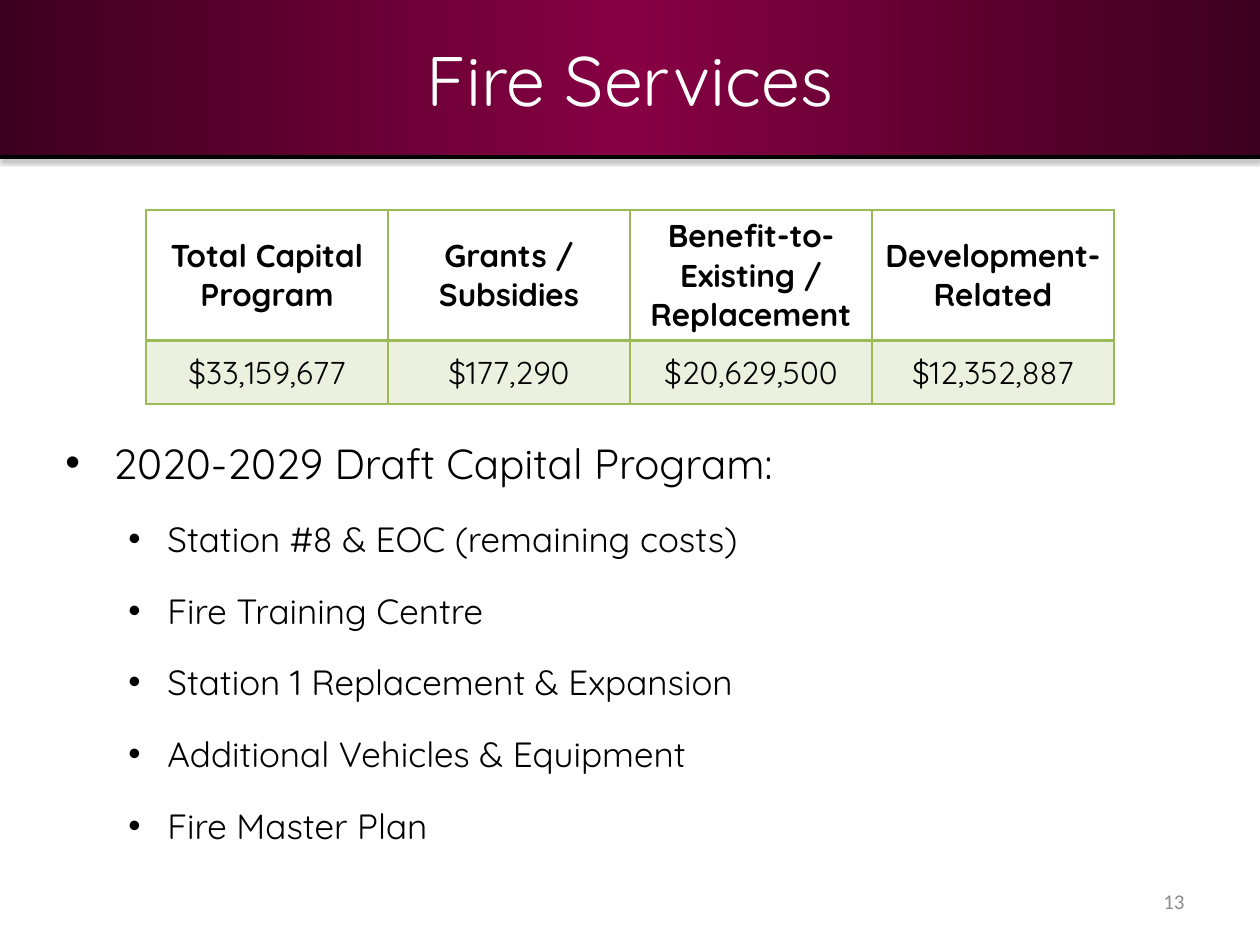
from lxml import etree
from pptx import Presentation
from pptx.dml.color import RGBColor
from pptx.enum.shapes import MSO_CONNECTOR, MSO_SHAPE
from pptx.enum.text import MSO_ANCHOR as Anchor, PP_ALIGN as Align
from pptx.oxml import parse_xml
from pptx.oxml.ns import nsdecls, qn
from pptx.util import Emu, Pt

BLACK = RGBColor(0x00, 0x00, 0x00)
WHITE = RGBColor(0xFF, 0xFF, 0xFF)
GRAY = RGBColor(0x8C, 0x8C, 0x8C)
GREEN = RGBColor(0x9B, 0xBB, 0x59)
PALE_GREEN = RGBColor(0xEB, 0xF1, 0xDE)
DARK_WINE = RGBColor(0x3D, 0x00, 0x1E)
WINE = RGBColor(0x86, 0x00, 0x43)


def px(count):
    return Emu(round(count * 914400 / 126))


def write(frame, text, align, anchor, **font_format):
    frame.word_wrap = True
    frame.vertical_anchor = anchor
    para = frame.paragraphs[0]
    para.alignment = align
    span = para.add_run()
    span.text = text
    color = font_format.pop("color")
    for name, value in font_format.items():
        setattr(span.font, name, value)
    span.font.color.rgb = color


deck = Presentation()
deck.slide_width, deck.slide_height = px(1260), px(945)
page = deck.slides.add_slide(deck.slide_layouts[6])

# Title band with a gradient that is brightest in the middle
band = page.shapes.add_shape(MSO_SHAPE.RECTANGLE, 0, 0, px(1260), px(157))
band.shadow.inherit = False
band.line.fill.background()
band.fill.gradient()
band.fill.gradient_angle = 0
stops = band._element.spPr.find(qn("a:gradFill")).find(qn("a:gsLst"))
for stop in list(stops):
    stops.remove(stop)
for position, color in [(0, DARK_WINE), (50, WINE), (100, DARK_WINE)]:
    stop = etree.SubElement(stops, qn("a:gs"), pos=str(position * 1000))
    etree.SubElement(stop, qn("a:srgbClr"), val=str(color))

title = page.shapes.add_textbox(0, 0, px(1260), px(157))
write(title.text_frame, "Fire Services", Align.CENTER, Anchor.MIDDLE,
      name="Quicksand", size=Pt(40), color=WHITE)

# Rule under the band, with a soft shadow
rule = page.shapes.add_connector(MSO_CONNECTOR.STRAIGHT, 0, px(157), px(1260), px(157))
rule.line.color.rgb = BLACK
rule.line.width = Pt(2)
rule._element.spPr.append(parse_xml(
    f'<a:effectLst {nsdecls("a")}>'
    '<a:outerShdw blurRad="39370" dist="20320" dir="5400000" rotWithShape="0">'
    '<a:srgbClr val="000000"><a:alpha val="38000"/></a:srgbClr>'
    '</a:outerShdw></a:effectLst>'))

# Funding table
ROWS = [
    ["Total Capital Program", "Grants / Subsidies",
     "Benefit-to-Existing / Replacement", "Development-Related"],
    ["$33,159,677", "$177,290", "$20,629,500", "$12,352,887"],
]
table = page.shapes.add_table(2, 4, px(146), px(210), px(968), px(194)).table
for column in table.columns:
    column.width = px(242)
for row, height in zip(table.rows, [131, 63]):
    row.height = px(height)

for row_index, texts in enumerate(ROWS):
    header = row_index == 0
    for column_index, text in enumerate(texts):
        cell = table.cell(row_index, column_index)
        write(cell.text_frame, text, Align.CENTER, Anchor.MIDDLE,
              name="Quicksand", size=Pt(18), bold=header, color=BLACK)
        cell.vertical_anchor = Anchor.MIDDLE
        if header:
            cell.fill.background()
        else:
            cell.fill.solid()
            cell.fill.fore_color.rgb = PALE_GREEN
        widths = {"lnL": 1, "lnR": 1, "lnT": 1, "lnB": 1}
        widths["lnB" if header else "lnT"] = 2
        for order, (side, width) in enumerate(widths.items()):
            border = parse_xml(
                f'<a:{side} {nsdecls("a")} w="{Pt(width)}"><a:solidFill>'
                f'<a:srgbClr val="{GREEN}"/></a:solidFill></a:{side}>')
            cell._tc.get_or_add_tcPr().insert(order, border)

# Capital program list: level, text
ITEMS = [
    (0, "2020-2029 Draft Capital Program:"),
    (1, "Station #8 & EOC (remaining costs)"),
    (1, "Fire Training Centre"),
    (1, "Station 1 Replacement & Expansion"),
    (1, "Additional Vehicles & Equipment"),
    (1, "Fire Master Plan"),
]
LEVELS = [  # left margin, hanging indent, text size
    (48, 48, 24),
    (102, 39, 20),
]
body = page.shapes.add_textbox(px(53), px(431), px(1144), px(441)).text_frame
body.word_wrap = True
for index, (level, text) in enumerate(ITEMS):
    para = body.paragraphs[0] if index == 0 else body.add_paragraph()
    margin, hang, size = LEVELS[level]
    para.level = level
    para.space_before = Pt(6 if index else 0)
    para.space_after = Pt(11)
    properties = para._p.get_or_add_pPr()
    properties.set("marL", str(px(margin)))
    properties.set("indent", str(-px(hang)))
    etree.SubElement(properties, qn("a:buFont"), typeface="Arial")
    etree.SubElement(properties, qn("a:buChar"), char="•")
    span = para.add_run()
    span.text = text
    for name, value in {"name": "Quicksand", "size": Pt(size)}.items():
        setattr(span.font, name, value)
    span.font.color.rgb = BLACK

# Page number
number = page.shapes.add_textbox(px(903), px(876), px(294), px(50))
write(number.text_frame, "13", Align.RIGHT, Anchor.MIDDLE,
      name="Calibri", size=Pt(12), color=GRAY)

deck.save("out.pptx")
